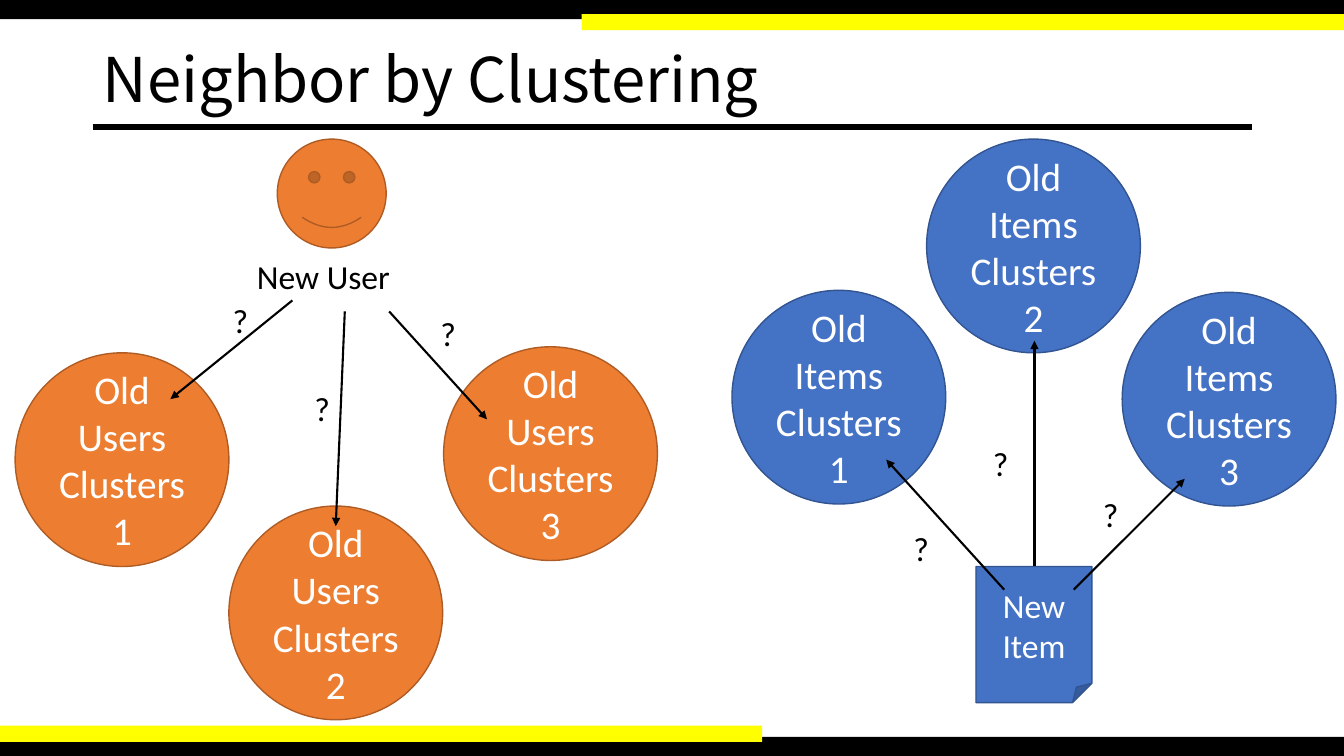
from lxml import etree
from pptx import Presentation
from pptx.dml.color import RGBColor
from pptx.enum import shapes, text
from pptx.oxml.ns import qn
from pptx.util import Inches, Pt

BLACK, WHITE, YELLOW = "000000", "FFFFFF", "FFFF00"
ORANGE = ("ED7D31", "AF5C24")
BLUE = ("4472C4", "325491")
KIND = shapes.MSO_SHAPE
CLUSTER_SIZE = 2.12


def paint(color_format, color):
    color_format.rgb = RGBColor.from_string(color)


def write(sp, words, size, color, font="Calibri", align=None):
    tf = sp.text_frame
    tf.vertical_anchor = text.MSO_ANCHOR.MIDDLE
    p = tf.paragraphs[0]
    p.text = words
    p.alignment = align
    p.font.size = Pt(size)
    p.font.name = font
    paint(p.font.color, color)
    return p


def add_shape(s, kind, box, fill, outline=None, words=None, size=28):
    sp = s.shapes.add_shape(kind, *map(Inches, box))
    sp.shadow.inherit = False
    sp.fill.solid()
    paint(sp.fill.fore_color, fill)
    if outline:
        paint(sp.line.color, outline)
        sp.line.width = Pt(1)
    else:
        sp.line.fill.background()
    if words:
        write(sp, words, size, WHITE, align=text.PP_ALIGN.CENTER)


def add_line(s, start, end, width, arrow=False):
    cx = s.shapes.add_connector(
        shapes.MSO_CONNECTOR.STRAIGHT, *map(Inches, (*start, *end)))
    paint(cx.line.color, BLACK)
    cx.line.width = Pt(width)
    sp_pr = cx._element.spPr
    if arrow:
        etree.SubElement(sp_pr.find(qn("a:ln")), qn("a:tailEnd"), type="triangle")
    etree.SubElement(sp_pr, qn("a:effectLst"))


def add_label(s, box, words):
    sp = s.shapes.add_textbox(*map(Inches, box))
    sp.text_frame.word_wrap = False
    sp.text_frame.auto_size = text.MSO_AUTO_SIZE.SHAPE_TO_FIT_TEXT
    write(sp, words, 24, BLACK)


def add_title(s, words):
    sp = s.shapes.add_textbox(*map(Inches, (0.92, 0.39, 11.5, 0.86)))
    sp.text_frame.word_wrap = True
    p = write(sp, words, 44, BLACK, "Noto Sans CJK SC")
    p.line_spacing = 0.9


def add_frame(s):
    for box, color in [
        ((0, 0, 13.33, 0.19), BLACK),
        ((0, 7.31, 13.33, 0.19), BLACK),
        ((5.77, 0.14, 7.56, 0.16), YELLOW),
        ((0, 7.2, 7.56, 0.16), YELLOW),
    ]:
        add_shape(s, KIND.RECTANGLE, box, color)
    add_line(s, (0.92, 1.26), (12.42, 1.26), 4)


def add_clusters(s, name, colors, corners):
    for number, corner in enumerate(corners, 1):
        add_shape(s, KIND.OVAL, (*corner, CLUSTER_SIZE, CLUSTER_SIZE),
                  *colors, f"Old {name} Clusters {number}")


def add_questions(s, links):
    for start, end, mark in links:
        add_line(s, start, end, 1.5, arrow=True)
        add_label(s, (*mark, 0.36, 0.5), "?")


def main():
    prs = Presentation()
    prs.slide_width, prs.slide_height = Inches(13.33), Inches(7.5)
    s = prs.slides.add_slide(prs.slide_layouts[6])
    add_frame(s)
    add_title(s, "Neighbor by Clustering")

    add_clusters(s, "Users", ORANGE, [(0.15, 3.5), (2.27, 5.02), (4.4, 3.44)])
    add_clusters(s, "Items", BLUE, [(7.26, 2.88), (9.19, 1.38), (11.13, 2.9)])

    add_shape(s, KIND.SMILEY_FACE, (2.75, 1.38, 1.08, 1.08), *ORANGE)
    add_label(s, (2.45, 2.49, 1.53, 0.5), "New User")
    add_questions(s, [
        ((2.9, 2.98), (1.69, 3.96), (2.21, 2.93)),
        ((3.42, 3.09), (3.33, 5.22), (3.02, 3.8)),
        ((3.86, 3.09), (4.83, 4.16), (4.27, 3.05)),
    ])

    add_shape(s, KIND.FOLDED_CORNER, (9.68, 5.62, 1.15, 1.35), *BLUE, "New Item", 24)
    add_questions(s, [
        ((9.96, 5.85), (8.79, 4.56), (8.96, 5.19)),
        ((10.26, 5.62), (10.26, 3.38), (9.75, 4.34)),
        ((10.65, 5.85), (11.75, 4.75), (10.84, 4.85)),
    ])
    prs.save("out.pptx")


if __name__ == "__main__":
    main()
